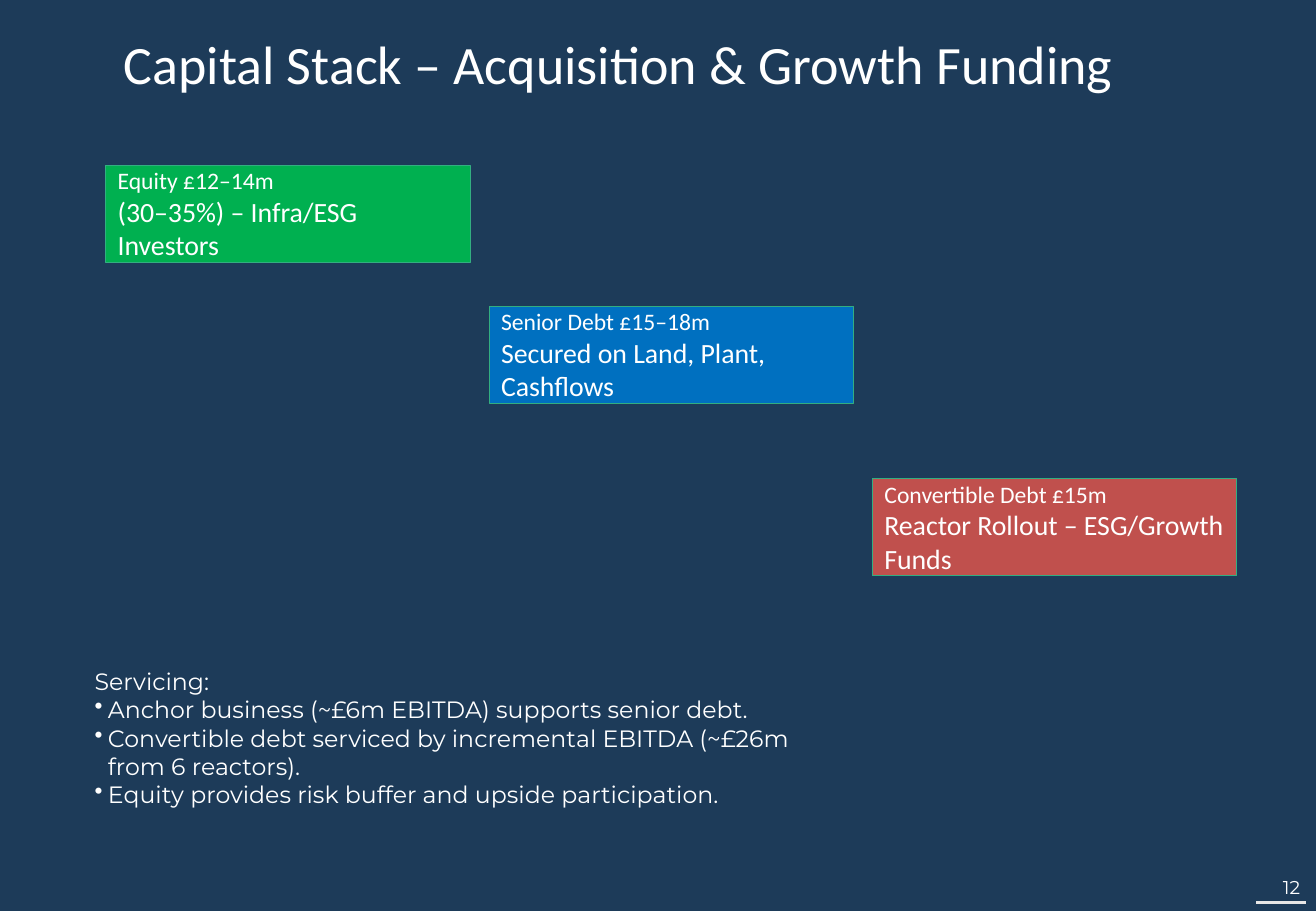
from dataclasses import dataclass

from lxml import etree
from pptx import Presentation
from pptx import util as u
from pptx.dml.color import RGBColor
from pptx.enum import shapes, text
from pptx.oxml import ns

CELL = 0.1  # inches per grid column and row
COLUMNS, ROWS = 108.3, 75


@dataclass(frozen=True)
class Theme:
    background: str = "1D3B59"
    ink: str = "FFFFFF"
    outline: str = "33AE81"
    rule: str = "E7E6E6"
    equity: str = "00B050"
    senior: str = "0070C0"
    convertible: str = "C0504D"
    heading_font: str = "Calibri"
    body_font: str = "Montserrat"
    title_size: float = 32
    detail_size: float = 16.5
    body_size: float = 14
    number_size: float = 11


@dataclass(frozen=True)
class Area:
    """A rectangle in grid columns and rows."""
    column: float
    row: float
    columns: float
    rows: float

    def lengths(self) -> tuple:
        return tuple(map(grid, (self.column, self.row, self.columns, self.rows)))


@dataclass(frozen=True)
class Tranche:
    amount: str
    detail: str
    fill: str
    row: float


THEME = Theme()
FIRST_COLUMN, COLUMN_STEP = 8.7, 31.55
TRANCHE_COLUMNS, TRANCHE_ROWS = 30, 8
BULLET_INDENT = 1.1

TRANCHES = (
    Tranche("Equity £12–14m", "(30–35%) – Infra/ESG Investors", THEME.equity, 13.6),
    Tranche("Senior Debt £15–18m", "Secured on Land, Plant, Cashflows", THEME.senior, 25.2),
    Tranche("Convertible Debt £15m", "Reactor Rollout – ESG/Growth Funds", THEME.convertible, 39.4),
)
SERVICING = (
    "Anchor business (~£6m EBITDA) supports senior debt.",
    "Convertible debt serviced by incremental EBITDA (~£26m from 6 reactors).",
    "Equity provides risk buffer and upside participation.",
)


def grid(cells: float) -> int:
    return u.Inches(cells * CELL)


def colour(value: str) -> RGBColor:
    return RGBColor.from_string(value)


def write(para, words: str, size: float, font: str) -> None:
    span = para.add_run()
    span.text = words
    span.font.size = u.Pt(size)
    span.font.name = font
    span.font.color.rgb = colour(THEME.ink)


def add_bullet(para) -> None:
    properties = para._p.get_or_add_pPr()
    properties.set("marL", str(grid(BULLET_INDENT)))
    properties.set("indent", str(-grid(BULLET_INDENT)))
    etree.SubElement(properties, ns.qn("a:buChar"), char="•")


def add_text_box(page, area: Area, wrap: bool):
    frame = page.shapes.add_textbox(*area.lengths()).text_frame
    frame.word_wrap = wrap
    return frame


def add_title(page) -> None:
    frame = add_text_box(page, Area(9.2, 2, 84.4, 6.4), wrap=False)
    write(frame.paragraphs[0], "Capital Stack – Acquisition & Growth Funding",
          THEME.title_size, THEME.heading_font)


def add_tranche(page, index: int, tranche: Tranche) -> None:
    area = Area(FIRST_COLUMN + index * COLUMN_STEP, tranche.row,
                TRANCHE_COLUMNS, TRANCHE_ROWS)
    box = page.shapes.add_shape(shapes.MSO_SHAPE.RECTANGLE, *area.lengths())
    box.shadow.inherit = False
    box.fill.solid()
    box.fill.fore_color.rgb = colour(tranche.fill)
    box.line.color.rgb = colour(THEME.outline)
    box.line.width = u.Pt(0.5)
    frame = box.text_frame
    frame.word_wrap = True
    frame.vertical_anchor = text.MSO_ANCHOR.MIDDLE
    lines = ((frame.paragraphs[0], tranche.amount, THEME.body_size),
             (frame.add_paragraph(), tranche.detail, THEME.detail_size))
    for para, words, size in lines:
        para.alignment = text.PP_ALIGN.LEFT
        write(para, words, size, THEME.heading_font)


def add_servicing(page) -> None:
    frame = add_text_box(page, Area(6.8, 54.4, 63.4, 12.8), wrap=True)
    write(frame.paragraphs[0], "Servicing:", THEME.body_size, THEME.body_font)
    for point in SERVICING:
        para = frame.add_paragraph()
        add_bullet(para)
        write(para, point, THEME.body_size, THEME.body_font)


def add_page_number(page) -> None:
    """Draw the number and the short rule beneath it."""
    frame = add_text_box(page, Area(103.4, 71.1, 3.6, 3.9), wrap=False)
    frame.margin_left = frame.margin_right = 0
    frame.margin_top = frame.margin_bottom = 0
    frame.vertical_anchor = text.MSO_ANCHOR.MIDDLE
    para = frame.paragraphs[0]
    para.alignment = text.PP_ALIGN.RIGHT
    write(para, "12", THEME.number_size, THEME.body_font)
    rule = page.shapes.add_connector(
        shapes.MSO_CONNECTOR.STRAIGHT, *map(grid, (103.4, 74.3, 107.5, 74.3)))
    rule.line.color.rgb = colour(THEME.rule)
    rule.line.width = u.Pt(1.5)
    etree.SubElement(rule._element.spPr, ns.qn("a:effectLst"))


def main() -> None:
    deck = Presentation()
    deck.slide_width, deck.slide_height = grid(COLUMNS), grid(ROWS)
    page = deck.slides.add_slide(deck.slide_layouts[6])
    page.background.fill.solid()
    page.background.fill.fore_color.rgb = colour(THEME.background)
    add_page_number(page)
    add_title(page)
    for index, tranche in enumerate(TRANCHES):
        add_tranche(page, index, tranche)
    add_servicing(page)
    deck.save("out.pptx")


if __name__ == "__main__":
    main()
